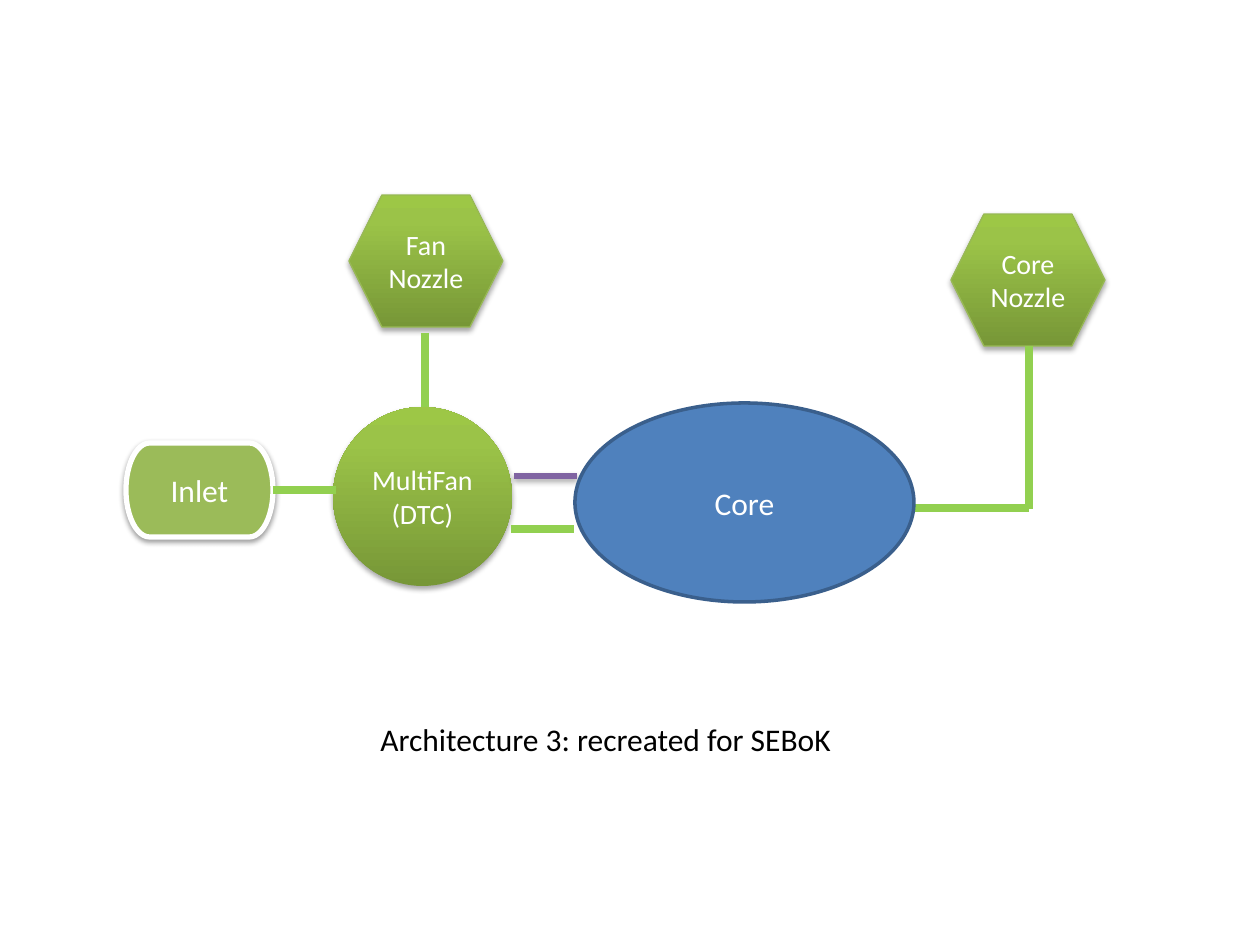
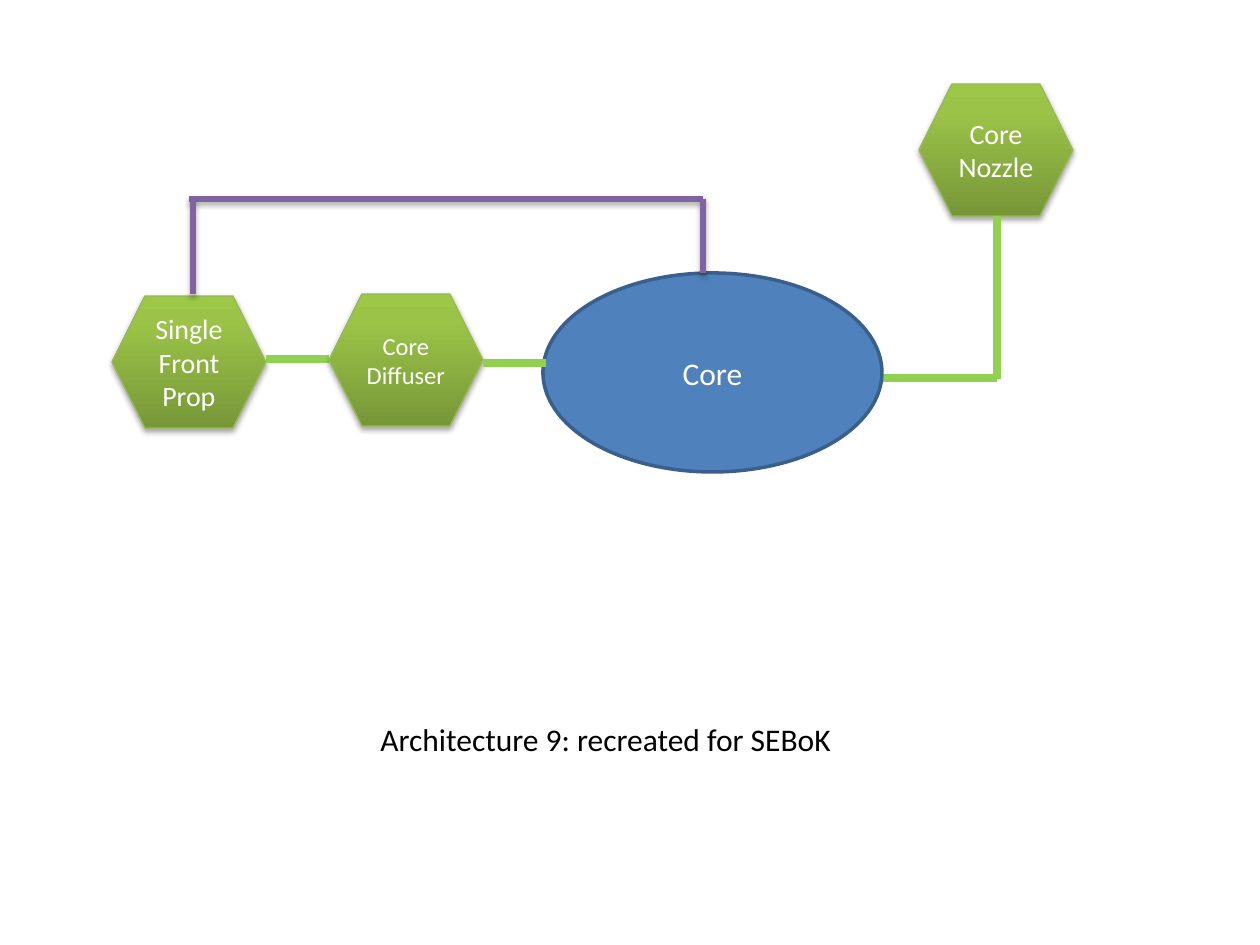
from copy import deepcopy

from pptx import Presentation
from pptx.dml.color import RGBColor
from pptx.enum.shapes import MSO_CONNECTOR, MSO_SHAPE
from pptx.enum.text import MSO_ANCHOR, MSO_AUTO_SIZE, PP_ALIGN
from pptx.oxml import parse_xml
from pptx.oxml.ns import nsdecls, qn
from pptx.util import Pt

PX = 914400 / 126
FONT = "Calibri"
HEXAGON, ELLIPSE = MSO_SHAPE.HEXAGON, MSO_SHAPE.OVAL
TERMINATOR = MSO_SHAPE.FLOWCHART_TERMINATOR
STRAIGHT = MSO_CONNECTOR.STRAIGHT
MIDDLE, CENTER = MSO_ANCHOR.MIDDLE, PP_ALIGN.CENTER
GROW = MSO_AUTO_SIZE.SHAPE_TO_FIT_TEXT

WHITE = RGBColor(0xFF, 0xFF, 0xFF)
BLACK = RGBColor(0x00, 0x00, 0x00)
INLET_GREEN = RGBColor(0x9B, 0xBB, 0x59)
EDGE_GREEN = RGBColor(0x98, 0xB9, 0x55)
FLOW_GREEN = RGBColor(0x92, 0xD0, 0x50)
SHAFT_PURPLE = RGBColor(0x80, 0x64, 0xA2)
CORE_BLUE = RGBColor(0x4F, 0x81, 0xBD)
CORE_EDGE = RGBColor(0x3A, 0x5F, 0x8C)
GREEN_STOPS = [
    (0, RGBColor(0x77, 0x97, 0x37)),
    (0.8, RGBColor(0x9B, 0xC3, 0x48)),
    (1, RGBColor(0x9D, 0xC7, 0x46)),
]

NO_SHADOW = parse_xml(f"<a:effectLst {nsdecls('a')}/>")
INLET_SHADOW, SHADOW = [
    parse_xml(
        f"<a:effectLst {nsdecls('a')}>"
        f'<a:outerShdw blurRad="40000" dist="{distance}" dir="5400000" rotWithShape="0">'
        f'<a:srgbClr val="000000"><a:alpha val="{alpha}"/></a:srgbClr>'
        "</a:outerShdw></a:effectLst>"
    )
    for distance, alpha in [(20000, 38000), (23000, 35000)]
]

HEX_WIDTH, HEX_HEIGHT = 154, 132
CORE_WIDTH, CORE_HEIGHT = 339, 199


def add_node(slide, kind, left, top, width, height, lines, size=16,
             fill=None, edge=EDGE_GREEN, weight=0.75, shadow=SHADOW):
    node = slide.shapes.add_shape(kind, *[round(n * PX) for n in (left, top, width, height)])
    if fill:
        node.fill.solid()
        node.fill.fore_color.rgb = fill
    else:
        node.fill.gradient()
        node.fill.gradient_angle = 90
        stop_list = node._element.spPr.find(".//" + qn("a:gsLst"))
        stop_list.append(deepcopy(stop_list[1]))
        for stop, (position, color) in zip(node.fill.gradient_stops, GREEN_STOPS):
            stop.position = position
            stop.color.rgb = color
    if edge:
        node.line.color.rgb = edge
        node.line.width = Pt(weight)
    else:
        node.line.fill.background()
    node._element.spPr.append(deepcopy(shadow))
    frame = node.text_frame
    frame.vertical_anchor = MIDDLE
    for index, line in enumerate(lines):
        para = frame.add_paragraph() if index else frame.paragraphs[0]
        para.alignment = CENTER
        span = para.add_run()
        span.text = line
        span.font.name = FONT
        span.font.size = Pt(size)
        span.font.color.rgb = WHITE
    return node


def add_link(slide, x1, y1, x2, y2, color=FLOW_GREEN):
    link = slide.shapes.add_connector(STRAIGHT, *[round(n * PX) for n in (x1, y1, x2, y2)])
    link.line.color.rgb = color
    link.line.width = Pt(3 if color == SHAFT_PURPLE else 4.5)
    link._element.spPr.append(deepcopy(SHADOW if color == SHAFT_PURPLE else NO_SHADOW))
    return link


deck = Presentation()
deck.slide_width = round(1260 * PX)
deck.slide_height = round(945 * PX)
blank = deck.slide_layouts[6]
fan_slide = deck.slides.add_slide(blank)
prop_slide = deck.slides.add_slide(blank)

inlet = add_node(fan_slide, TERMINATOR, 126, 443, 147, 94, ["Inlet"], 18,
                 INLET_GREEN, WHITE, 3, INLET_SHADOW)
add_node(fan_slide, HEXAGON, 349, 195, HEX_WIDTH, HEX_HEIGHT, ["Fan", "Nozzle"])
add_node(fan_slide, ELLIPSE, 333, 407, 179, 179, ["MultiFan", "(DTC)"], edge=None)
inlet_link = add_link(fan_slide, 273, 490, 336, 490)
inlet_link.begin_connect(inlet, 3)
add_link(fan_slide, 425, 333, 425, 407)
add_link(fan_slide, 511, 529, 574, 529)
add_link(fan_slide, 514, 476, 577, 476, SHAFT_PURPLE)

add_node(prop_slide, HEXAGON, 112, 296, HEX_WIDTH, HEX_HEIGHT, ["Single", "Front", "Prop"])
add_link(prop_slide, 266, 359, 329, 359)
add_link(prop_slide, 189, 199, 703, 199, SHAFT_PURPLE)

for slide, number, core_left, core_top in [(fan_slide, 3, 575, 403), (prop_slide, 9, 543, 273)]:
    nozzle_left, nozzle_top = core_left + 376, core_top - 189
    elbow_x, elbow_y = nozzle_left + HEX_WIDTH // 2 + 1, core_top + 105
    add_node(slide, HEXAGON, nozzle_left, nozzle_top, HEX_WIDTH, HEX_HEIGHT, ["Core", "Nozzle"])
    add_link(slide, core_left + CORE_WIDTH, elbow_y, elbow_x, elbow_y)
    add_link(slide, elbow_x, nozzle_top + HEX_HEIGHT, elbow_x, elbow_y + 1)
    add_node(slide, ELLIPSE, core_left, core_top, CORE_WIDTH, CORE_HEIGHT, ["Core"], 18,
             CORE_BLUE, CORE_EDGE, 2, NO_SHADOW)

    caption = slide.shapes.add_textbox(*[round(n * PX) for n in (368, 714, 609, 50)])
    caption.text_frame.word_wrap = True
    caption.text_frame.auto_size = GROW
    span = caption.text_frame.paragraphs[0].add_run()
    span.text = f"Architecture {number}: recreated for SEBoK"
    span.font.name = FONT
    span.font.size = Pt(18)
    span.font.color.rgb = BLACK

add_node(prop_slide, HEXAGON, 329, 294, HEX_WIDTH, HEX_HEIGHT, ["Core", "Diffuser"], 14)
add_link(prop_slide, 193, 199, 193, 294, SHAFT_PURPLE)
add_link(prop_slide, 703, 199, 703, 273, SHAFT_PURPLE)
add_link(prop_slide, 483, 363, 546, 363)

deck.save("out.pptx")
